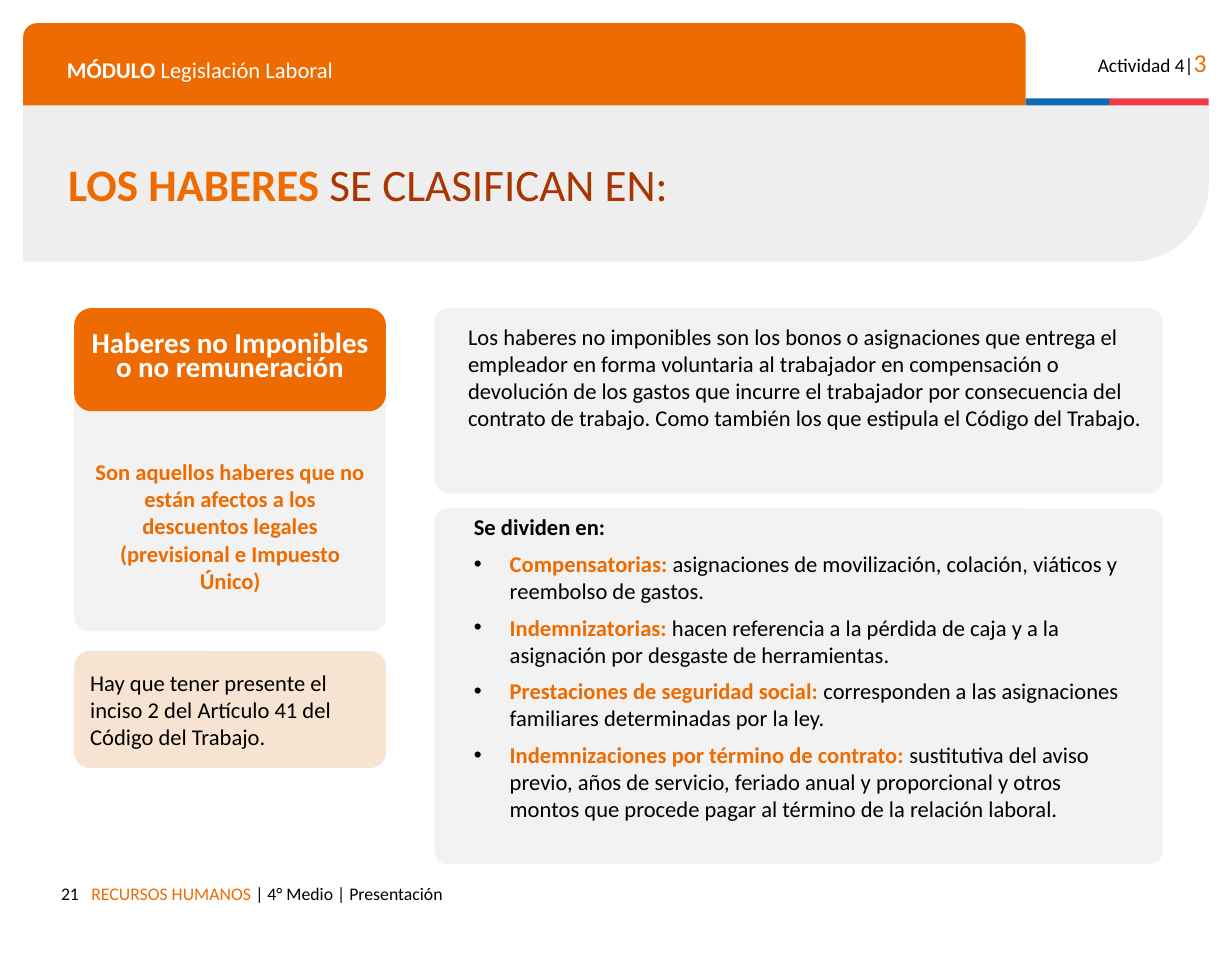
from dataclasses import dataclass

from lxml import etree
from pptx import Presentation
from pptx.dml.color import RGBColor
from pptx.enum.shapes import MSO_SHAPE
from pptx.enum.text import MSO_ANCHOR, PP_ALIGN
from pptx.oxml.ns import qn
from pptx.slide import Slide
from pptx.text.text import TextFrame
from pptx.util import Pt

PX = 9144
RECT = MSO_SHAPE.RECTANGLE
ROUND = MSO_SHAPE.ROUNDED_RECTANGLE
TAB = MSO_SHAPE.ROUND_2_SAME_RECTANGLE
CORNER = MSO_SHAPE.ROUND_1_RECTANGLE
TOP, MID, LOW = MSO_ANCHOR.TOP, MSO_ANCHOR.MIDDLE, MSO_ANCHOR.BOTTOM
LEFT, MIDDLE, RIGHT = PP_ALIGN.LEFT, PP_ALIGN.CENTER, PP_ALIGN.RIGHT


@dataclass(frozen=True)
class Theme:
    font: str = "Calibri"
    orange: str = "ED6B00"
    rust: str = "A93501"
    black: str = "000000"
    white: str = "FFFFFF"
    band: str = "EEEEEE"
    card: str = "F2F2F2"
    peach: str = "F7E3D1"
    blue: str = "0F69B4"
    red: str = "EB3C46"
    foot: int = 11
    label: int = 12
    body: int = 14
    mark: int = 16
    head: int = 18
    title: int = 28


T = Theme()


@dataclass(frozen=True)
class Run:
    text: str
    color: str = T.black
    size: int = T.body
    bold: bool = False


@dataclass(frozen=True)
class Para:
    runs: tuple[Run, ...]
    align: PP_ALIGN = LEFT
    before: int = 0
    line: float | Pt | None = None
    bullet: bool = False


@dataclass(frozen=True)
class Box:
    area: tuple[int, int, int, int]
    paras: tuple[Para, ...] = ()
    kind: MSO_SHAPE | None = None
    fill: str = T.card
    bend: tuple[float, ...] = ()
    flip: bool = False
    anchor: MSO_ANCHOR = TOP
    inset: tuple[int, int, int, int] = (10, 10, 10, 10)


def add_dot(props: etree.ElementBase) -> None:
    props.set("marL", str(31 * PX))
    props.set("indent", str(-31 * PX))
    tint = etree.SubElement(props, qn("a:buClr"))
    etree.SubElement(tint, qn("a:srgbClr"), val=T.black)
    etree.SubElement(props, qn("a:buFont"), typeface="Arial")
    etree.SubElement(props, qn("a:buChar"), char="•")


def write(frame: TextFrame, box: Box) -> None:
    frame.word_wrap = True
    frame.vertical_anchor = box.anchor
    left, top, right, low = (n * PX for n in box.inset)
    frame.margin_left, frame.margin_top = left, top
    frame.margin_right, frame.margin_bottom = right, low
    for i, item in enumerate(box.paras):
        para = frame.add_paragraph() if i else frame.paragraphs[0]
        para.alignment = item.align
        para.space_before = Pt(item.before)
        if item.line:
            para.line_spacing = item.line
        if item.bullet:
            add_dot(para._p.get_or_add_pPr())
        for part in item.runs:
            run = para.add_run()
            run.text = part.text
            run.font.name = T.font
            run.font.size = Pt(part.size)
            run.font.bold = part.bold
            run.font.color.rgb = RGBColor.from_string(part.color)


def draw(slide: Slide, box: Box) -> None:
    area = [n * PX for n in box.area]
    if box.kind is None:
        shape = slide.shapes.add_textbox(*area)
    else:
        shape = slide.shapes.add_shape(box.kind, *area)
        shape.shadow.inherit = False
        shape.fill.solid()
        shape.fill.fore_color.rgb = RGBColor.from_string(box.fill)
        shape.line.fill.background()
        for i, bend in enumerate(box.bend):
            shape.adjustments[i] = bend
        if box.flip:
            shape.element.spPr.find(qn("a:xfrm")).set("flipV", "1")
    if box.paras:
        write(shape.text_frame, box)


def point(name: str, text: str) -> Para:
    runs = (Run(name + " ", T.orange, bold=True), Run(text))
    return Para(runs, before=6, bullet=True)


SLIM = (10, 5, 10, 5)
FRAME = (
    Box((20, 91, 1023, 135), kind=CORNER, fill=T.band, bend=(0.5,), flip=True),
    Box((20, 20, 865, 71), kind=TAB, fill=T.orange, bend=(0.167, 0)),
    Box((885, 85, 72, 6), kind=RECT, fill=T.blue),
    Box((957, 85, 86, 6), kind=RECT, fill=T.red),
    Box((923, 30, 128, 38), (Para((
        Run("Actividad 4|", size=T.label),
        Run("3", T.orange, T.mark)), RIGHT),)),
    Box((48, 38, 814, 35), (Para((
        Run("MÓDULO ", T.white, bold=True),
        Run("Legislación Laboral", T.white))),)),
    Box((69, 753, 714, 38), (Para((
        Run("RECURSOS HUMANOS ", T.orange, T.foot),
        Run("| 4° Medio | Presentación", size=T.foot))),)),
    Box((20, 753, 58, 29), (Para((Run("21", size=T.foot),), RIGHT),)),
    Box((49, 111, 710, 104), (Para((
        Run("LOS HABERES ", T.orange, T.title, True),
        Run("SE CLASIFICAN EN:", T.rust, T.title)), line=0.8),), anchor=MID),
)
CARDS = (
    Box((64, 324, 269, 221), (Para((Run(
        "Son aquellos haberes que no están afectos a los descuentos legales "
        "(previsional e Impuesto Único)", T.orange, bold=True),), MIDDLE),),
        ROUND, bend=(0.055,), anchor=LOW, inset=(10, 5, 10, 29)),
    Box((64, 266, 269, 89), (Para((Run(
        "Haberes no Imponibles o no remuneración",
        T.white, T.head, True),), MIDDLE, line=Pt(15)),),
        ROUND, T.orange, anchor=MID, inset=SLIM),
    Box((64, 562, 269, 101), (Para((Run(
        "Hay que tener presente el inciso 2 del Artículo 41 del "
        "Código del Trabajo."),)),),
        ROUND, T.peach, (0.132,), anchor=MID),
    Box((375, 266, 628, 160), kind=ROUND, bend=(0.077,)),
    Box((394, 274, 604, 136), (Para((Run(
        "Los haberes no imponibles son los bonos o asignaciones que entrega "
        "el empleador en forma voluntaria al trabajador en compensación o "
        "devolución de los gastos que incurre el trabajador por consecuencia "
        "del contrato de trabajo. Como también los que estipula el Código "
        "del Trabajo."),), before=6),), inset=SLIM),
    Box((375, 439, 628, 307), kind=ROUND, bend=(0.035,)),
    Box((399, 438, 583, 288), (
        Para((Run("Se dividen en:", bold=True),), before=6),
        point("Compensatorias:", "asignaciones de movilización, colación, "
              "viáticos y reembolso de gastos."),
        point("Indemnizatorias:", "hacen referencia a la pérdida de caja y "
              "a la asignación por desgaste de herramientas."),
        point("Prestaciones de seguridad social:", "corresponden a las "
              "asignaciones familiares determinadas por la ley."),
        point("Indemnizaciones por término de contrato:", "sustitutiva del "
              "aviso previo, años de servicio, feriado anual y proporcional "
              "y otros montos que procede pagar al término de la relación "
              "laboral.")), inset=SLIM),
)


def main() -> None:
    deck = Presentation()
    deck.slide_width, deck.slide_height = 1063 * PX, 827 * PX
    slide = deck.slides.add_slide(deck.slide_layouts[6])
    for box in FRAME + CARDS:
        draw(slide, box)
    deck.save("out.pptx")


if __name__ == "__main__":
    main()
